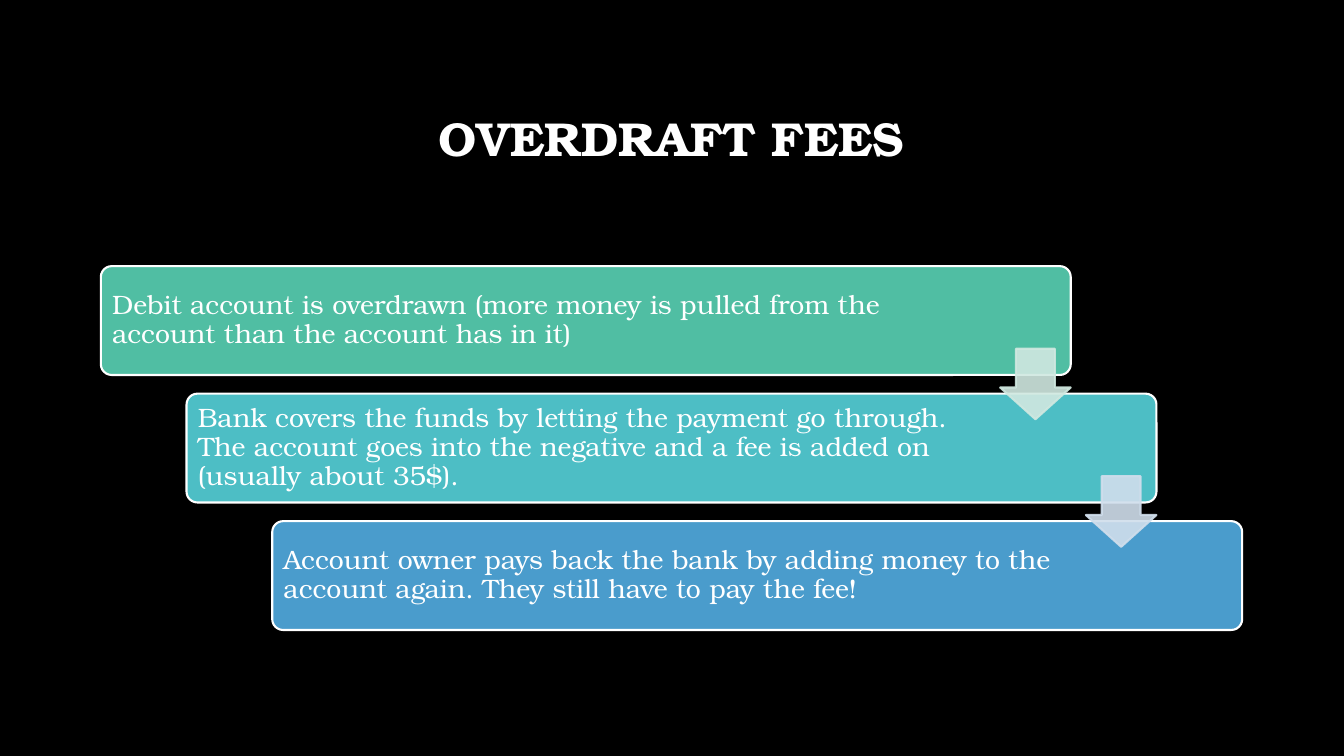
from lxml.etree import SubElement
from pptx import Presentation
from pptx.dml.color import RGBColor
from pptx.enum.shapes import MSO_SHAPE
from pptx.enum.text import MSO_ANCHOR, PP_ALIGN
from pptx.oxml.ns import qn
from pptx.util import Inches, Pt

FACE = "TeX Gyre Bonum"
STEPS = [
    ("Debit account is overdrawn (more money is pulled from the account "
     "than the account has in it)", "50BEA3", 1.14),
    ("Bank covers the funds by letting the payment go through. The account "
     "goes into the negative and a fee is added on (usually about 35$).",
     "4DBEC5", 1.58),
    ("Account owner pays back the bank by adding money to the account again. "
     "They still have to pay the fee!", "4A9CCC", 1.58),
]
TINTS = ["D0E8E0", "D0DEEC"]


def color(code):
    """Turn a hex string into a colour."""
    return RGBColor.from_string(code)


def apply(item, values):
    """Set each attribute named in a dict."""
    for name, value in values.items():
        setattr(item, name, value)


def write(shape, text, align, size, bold=False, right=0.08):
    """Fill a shape with one formatted paragraph."""
    frame = shape.text_frame
    frame.text = text
    pad = Inches(0.08)
    apply(frame, {"word_wrap": True, "vertical_anchor": MSO_ANCHOR.MIDDLE,
                  "margin_left": pad, "margin_right": Inches(right),
                  "margin_top": pad, "margin_bottom": pad})
    para = frame.paragraphs[0]
    apply(para, {"alignment": align, "line_spacing": 0.9})
    apply(para.font, {"name": FACE, "size": Pt(size), "bold": bold})
    para.font.color.rgb = color("FFFFFF")


def block(slide, kind, box, fill, line, adjust):
    """Add a filled and outlined preset shape."""
    shape = slide.shapes.add_shape(kind, *map(Inches, box))
    shape.shadow.inherit = False
    shape.fill.solid()
    shape.fill.fore_color.rgb = color(fill)
    shape.line.color.rgb = color(line)
    shape.line.width = Pt(1.5)
    for index, value in enumerate(adjust):
        shape.adjustments[index] = value
    return shape


def fade(shape, percent):
    """Make the fill and line of a shape partly clear."""
    for node in shape.element.spPr.iter(qn("a:srgbClr")):
        SubElement(node, qn("a:alpha"), val=str(percent * 1000))


def heading(slide, box, text):
    """Place the slide title in a box."""
    title = slide.shapes.title
    names = ("left", "top", "width", "height")
    apply(title, dict(zip(names, map(Inches, box))))
    write(title, text, PP_ALIGN.CENTER, 34, True)


def stairs(slide, box, steps, tints):
    """Place stepped cards in a box, joined by down arrows."""
    left, top, width, height = box
    wide, high, side = 9.62, 1.08, 0.7
    gaps = len(steps) - 1
    spots = [(left + i * (width - wide) / gaps, top + i * (height - high) / gaps)
             for i in range(len(steps))]
    for (x, y), (text, fill, right) in zip(spots, steps):
        card = block(slide, MSO_SHAPE.ROUNDED_RECTANGLE, (x, y, wide, high),
                     fill, "FFFFFF", [0.1])
        write(card, text, PP_ALIGN.LEFT, 19, right=right)
    for (x, y), tint in zip(spots, tints):
        arrow = block(slide, MSO_SHAPE.DOWN_ARROW,
                      (x + wide - side, y + 0.82, side, side),
                      tint, tint, [0.55, 0.45])
        fade(arrow, 90)


def main():
    """Build and save the slide."""
    deck = Presentation()
    apply(deck, {"slide_width": Inches(13.33), "slide_height": Inches(7.5)})
    slide = deck.slides.add_slide(deck.slide_layouts[5])
    slide.background.fill.solid()
    slide.background.fill.fore_color.rgb = color("000000")
    heading(slide, (1, 0.67, 11.32, 1.45), "OVERDRAFT FEES")
    stairs(slide, (1, 2.64, 11.32, 3.61), STEPS, TINTS)
    deck.save("out.pptx")


if __name__ == "__main__":
    main()
